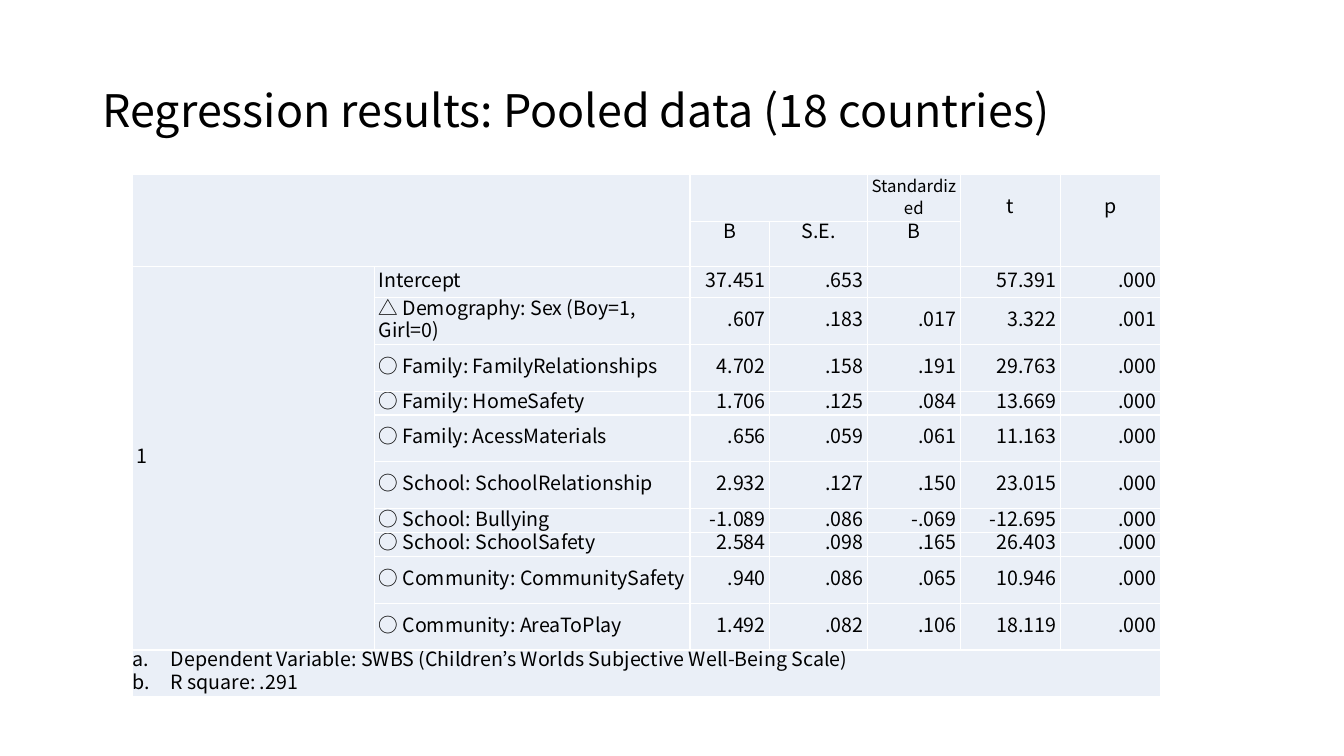
from dataclasses import dataclass

import pptx
import pptx.dml.color
import pptx.enum.text
import pptx.oxml
import pptx.oxml.ns
import pptx.util
from pptx.util import Cm

ALIGN = pptx.enum.text.PP_ALIGN
ANCHOR = pptx.enum.text.MSO_ANCHOR


@dataclass(frozen=True)
class Theme:
    font: str = "Noto Sans CJK KR"
    ink: str = "000000"
    cell: str = "EAEFF7"
    border: str = "FFFFFF"
    title_size: int = 32
    table_size: int = 14
    small_size: int = 12
    line: int = 16


THEME = Theme()

COLUMN_WIDTHS = [6.1, 7.95, 2.01, 2.46, 2.34, 2.52, 2.52]
TALL, SHORT = 1.18, 0.6
HEADER_HEIGHTS = [TALL, 1.13]
HEADERS = [
    (0, 4, "Standardized"), (0, 5, "t"), (0, 6, "p"),
    (1, 2, "B"), (1, 3, "S.E."), (1, 4, "B"),
]
# Row height, predictor, B, S.E., standardized B, t, p
PREDICTORS = [
    (0.79, "Intercept", "37.451", ".653", "", "57.391", ".000"),
    (TALL, "△ Demography: Sex (Boy=1, Girl=0)", ".607", ".183", ".017", "3.322", ".001"),
    (TALL, "○ Family: FamilyRelationships", "4.702", ".158", ".191", "29.763", ".000"),
    (SHORT, "○ Family: HomeSafety", "1.706", ".125", ".084", "13.669", ".000"),
    (TALL, "○ Family: AcessMaterials", ".656", ".059", ".061", "11.163", ".000"),
    (TALL, "○ School: SchoolRelationship", "2.932", ".127", ".150", "23.015", ".000"),
    (SHORT, "○ School: Bullying", "-1.089", ".086", "-.069", "-12.695", ".000"),
    (SHORT, "○ School: SchoolSafety", "2.584", ".098", ".165", "26.403", ".000"),
    (TALL, "○ Community: CommunitySafety", ".940", ".086", ".065", "10.946", ".000"),
    (TALL, "○ Community: AreaToPlay", "1.492", ".082", ".106", "18.119", ".000"),
]
NOTES = [
    "Dependent Variable: SWBS (Children’s Worlds Subjective Well-Being Scale)",
    "R square: .291",
]


def xml_element(text):
    return pptx.oxml.parse_xml(text.replace(" ", f" {pptx.oxml.ns.nsdecls('a')} ", 1))


def format_runs(p, size):
    for r in p.runs:
        r.font.size = pptx.util.Pt(size)
        r.font.name = THEME.font
        r.font.color.rgb = pptx.dml.color.RGBColor.from_string(THEME.ink)
        r.font._element.append(xml_element(f'<a:ea typeface="{THEME.font}"/>'))


def add_title(s, left, top, width, height):
    title = s.shapes.title
    title.left, title.top, title.width, title.height = left, top, width, height
    tf = title.text_frame
    tf.text = "Regression results: Pooled data (18 countries)"
    tf.vertical_anchor = ANCHOR.MIDDLE
    p = tf.paragraphs[0]
    p.alignment = ALIGN.LEFT
    p.line_spacing = 0.9
    format_runs(p, THEME.title_size)


def style_cell(cell):
    """Give a cell its fill, white borders and narrow side margins."""
    cell.fill.solid()
    cell.fill.fore_color.rgb = pptx.dml.color.RGBColor.from_string(THEME.cell)
    cell.margin_left = cell.margin_right = Cm(0.1)
    cell.margin_top = cell.margin_bottom = 0
    cell.text_frame.paragraphs[0].line_spacing = pptx.util.Pt(THEME.line)
    for i, side in enumerate("LRTB"):
        cell._tc.tcPr.insert(i, xml_element(
            f'<a:ln{side} w="12700"><a:solidFill><a:srgbClr val="{THEME.border}"/>'
            f'</a:solidFill></a:ln{side}>'))


def write_cell(cell, text, align, anchor=ANCHOR.MIDDLE, size=THEME.table_size):
    cell.vertical_anchor = anchor
    p = cell.text_frame.paragraphs[0]
    p.text = text
    p.alignment = align
    format_runs(p, size)


def write_header(table):
    table.cell(0, 0).merge(table.cell(1, 1))
    table.cell(0, 2).merge(table.cell(0, 3))
    for column in (5, 6):
        table.cell(0, column).merge(table.cell(1, column))
        table.cell(0, column).margin_top = pptx.util.Pt(THEME.line)
    for row, column, text in HEADERS:
        size = THEME.small_size if text == "Standardized" else THEME.table_size
        write_cell(table.cell(row, column), text, ALIGN.CENTER, ANCHOR.TOP, size)


def write_predictors(table, first):
    table.cell(first, 0).merge(table.cell(first + len(PREDICTORS) - 1, 0))
    write_cell(table.cell(first, 0), "1", ALIGN.LEFT)
    for row, (_, *texts) in enumerate(PREDICTORS, first):
        for column, text in enumerate(texts, 1):
            align = ALIGN.LEFT if column == 1 else ALIGN.RIGHT
            write_cell(table.cell(row, column), text, align)


def write_notes(table, row):
    cell = table.cell(row, 0)
    cell.merge(table.cell(row, len(COLUMN_WIDTHS) - 1))
    cell.margin_left = 0
    tf = cell.text_frame
    tf.text = "\n".join(NOTES)
    for p in tf.paragraphs:
        p.line_spacing = pptx.util.Pt(THEME.line)
        format_runs(p, THEME.table_size)
        pPr = p._p.get_or_add_pPr()
        pPr.set("marL", str(Cm(0.96)))
        pPr.set("indent", str(-Cm(0.96)))
        pPr.append(xml_element('<a:buAutoNum type="alphaLcPeriod"/>'))


def add_regression_table(s, left, top):
    heights = HEADER_HEIGHTS + [row[0] for row in PREDICTORS] + [TALL]
    table = s.shapes.add_table(
        len(heights), len(COLUMN_WIDTHS), left, top,
        Cm(sum(COLUMN_WIDTHS)), Cm(sum(heights))).table
    table.first_row = table.horz_banding = False
    for column, width in zip(table.columns, COLUMN_WIDTHS):
        column.width = Cm(width)
    for row, height in zip(table.rows, heights):
        row.height = Cm(height)
    for cell in table.iter_cells():
        style_cell(cell)
    write_header(table)
    write_predictors(table, len(HEADER_HEIGHTS))
    write_notes(table, len(heights) - 1)


def main():
    prs = pptx.Presentation()
    prs.slide_width, prs.slide_height = Cm(33.87), Cm(19.05)
    s = prs.slides.add_slide(prs.slide_layouts[5])
    add_title(s, Cm(2.33), Cm(1.01), Cm(29.21), Cm(3.68))
    add_regression_table(s, Cm(3.34), Cm(4.4))
    prs.save("out.pptx")


if __name__ == "__main__":
    main()
